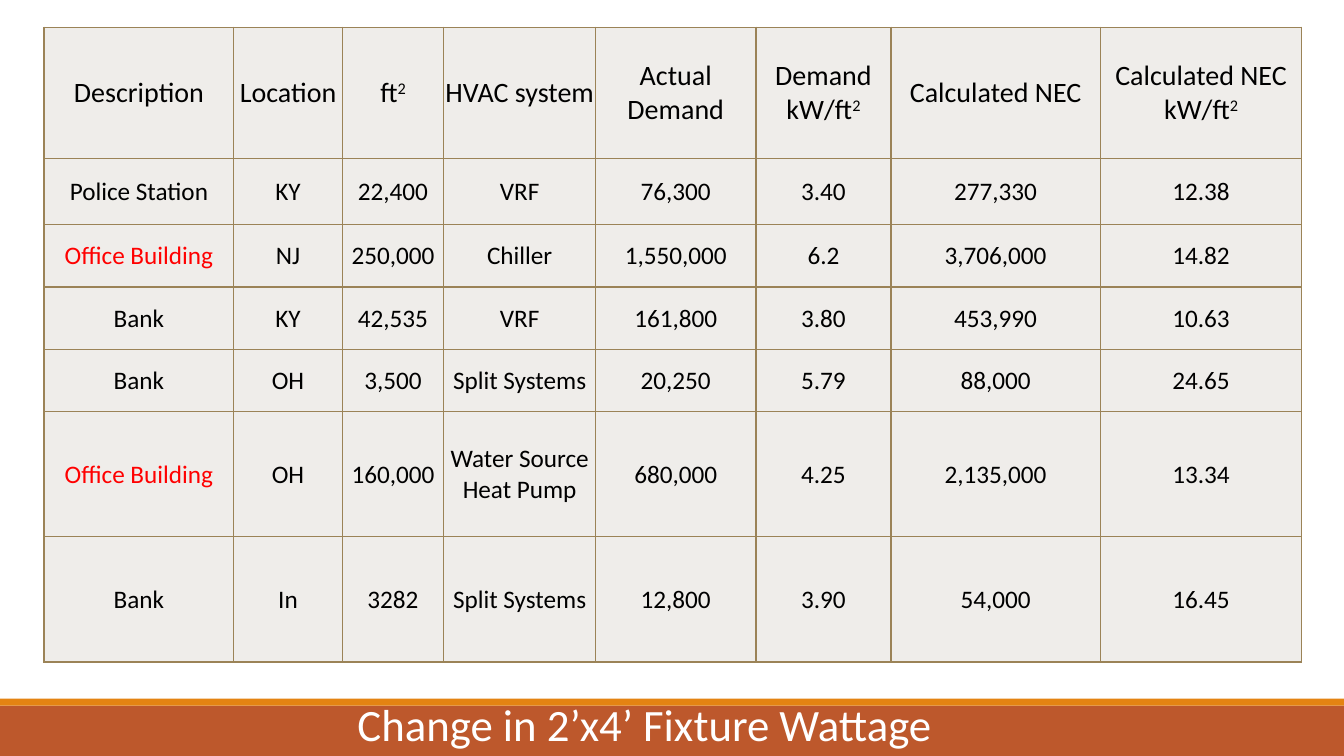
"""Build a slide with a table of electrical demand by building."""
from dataclasses import dataclass

from lxml.etree import SubElement as Sub
from pptx import Presentation
from pptx.dml.color import RGBColor
from pptx.enum.shapes import MSO_SHAPE
from pptx.enum.text import MSO_ANCHOR, MSO_AUTO_SIZE, PP_ALIGN
from pptx.oxml.ns import qn
from pptx.slide import Slide
from pptx.util import Pt

BLACK = RGBColor(0x00, 0x00, 0x00)
WHITE = RGBColor(0xFF, 0xFF, 0xFF)
RED = RGBColor(0xFF, 0x00, 0x00)
RUST = RGBColor(0xBD, 0x58, 0x2C)
AMBER = RGBColor(0xE4, 0x83, 0x12)
SAND = RGBColor(0xEF, 0xED, 0xEA)
TAN = RGBColor(0x9B, 0x83, 0x57)

FONT = "Calibri"
WIDE, HIGH = 960, 540
WIDTHS = (135.5, 77.5, 72.5, 108.5, 114.5, 96.5, 149.5, 144)
HEADS = ("Description", "Location", "ft^2", "HVAC system", "Actual Demand",
         "Demand kW/ft^2", "Calculated NEC", "Calculated NEC\nkW/ft^2")


@dataclass
class Band:
    top: float
    height: float
    color: RGBColor


@dataclass
class Row:
    height: float
    texts: tuple[str, ...]
    size: int = 18
    first: RGBColor = BLACK


BANDS = (Band(504, 36, RUST), Band(499, 5, AMBER))
ROWS = (
    Row(93.5, HEADS, size=20),
    Row(47.5, ("Police Station", "KY", "22,400", "VRF", "76,300", "3.40", "277,330", "12.38")),
    Row(44.5, ("Office Building", "NJ", "250,000", "Chiller", "1,550,000", "6.2",
               "3,706,000", "14.82"), first=RED),
    Row(44.5, ("Bank", "KY", "42,535", "VRF", "161,800", "3.80", "453,990", "10.63")),
    Row(44.5, ("Bank", "OH", "3,500", "Split Systems", "20,250", "5.79", "88,000", "24.65")),
    Row(89.5, ("Office Building", "OH", "160,000", "Water Source Heat Pump", "680,000",
               "4.25", "2,135,000", "13.34"), first=RED),
    Row(89.5, ("Bank", "In", "3282", "Split Systems", "12,800", "3.90", "54,000", "16.45")),
)


def add_band(slide: Slide, band: Band) -> None:
    shape = slide.shapes.add_shape(
        MSO_SHAPE.RECTANGLE, Pt(0), Pt(band.top), Pt(WIDE), Pt(band.height))
    shape.shadow.inherit = False
    shape.fill.solid()
    shape.fill.fore_color.rgb = band.color
    shape.line.fill.background()


def style(para, size: int, color: RGBColor) -> None:
    para.alignment = PP_ALIGN.CENTER
    para.font.name = FONT
    para.font.size = Pt(size)
    para.font.color.rgb = color


def add_title(slide: Slide, text: str) -> None:
    box = slide.shapes.add_textbox(Pt(245.5), Pt(494), Pt(430), Pt(46))
    frame = box.text_frame
    frame.word_wrap = False
    frame.auto_size = MSO_AUTO_SIZE.SHAPE_TO_FIT_TEXT
    frame.text = text
    style(frame.paragraphs[0], 32, WHITE)


def add_edges(cell) -> None:
    props = cell._tc.get_or_add_tcPr()
    for side in ("lnL", "lnR", "lnT", "lnB"):
        line = Sub(props, qn(f"a:{side}"), w=str(Pt(1)))
        fill = Sub(line, qn("a:solidFill"))
        Sub(fill, qn("a:srgbClr"), val=str(TAN))


def fill_cell(cell, text: str, size: int, color: RGBColor) -> None:
    add_edges(cell)
    cell.fill.solid()
    cell.fill.fore_color.rgb = SAND
    cell.vertical_anchor = MSO_ANCHOR.MIDDLE
    cell.margin_left = cell.margin_right = cell.margin_top = Pt(0.7)
    cell.margin_bottom = Pt(0)
    frame = cell.text_frame
    for num, line in enumerate(text.split("\n")):
        para = frame.add_paragraph() if num else frame.paragraphs[0]
        style(para, size, color)
        base, _, power = line.partition("^")
        para.add_run().text = base
        if power:
            run = para.add_run()
            run.text = power
            run._r.get_or_add_rPr().set("baseline", "30000")


def add_grid(slide: Slide) -> None:
    high = sum(row.height for row in ROWS)
    grid = slide.shapes.add_table(
        len(ROWS), len(WIDTHS), Pt(31.5), Pt(19.5), Pt(sum(WIDTHS)), Pt(high)).table
    for col, width in zip(grid.columns, WIDTHS):
        col.width = Pt(width)
    for line, row in zip(grid.rows, ROWS):
        line.height = Pt(row.height)
        for num, (cell, text) in enumerate(zip(line.cells, row.texts)):
            fill_cell(cell, text, row.size, BLACK if num else row.first)


def main() -> None:
    deck = Presentation()
    deck.slide_width, deck.slide_height = Pt(WIDE), Pt(HIGH)
    slide = deck.slides.add_slide(deck.slide_layouts[6])
    for band in BANDS:
        add_band(slide, band)
    add_title(slide, "Change in 2’x4’ Fixture Wattage")
    add_grid(slide)
    deck.save("out.pptx")


if __name__ == "__main__":
    main()
